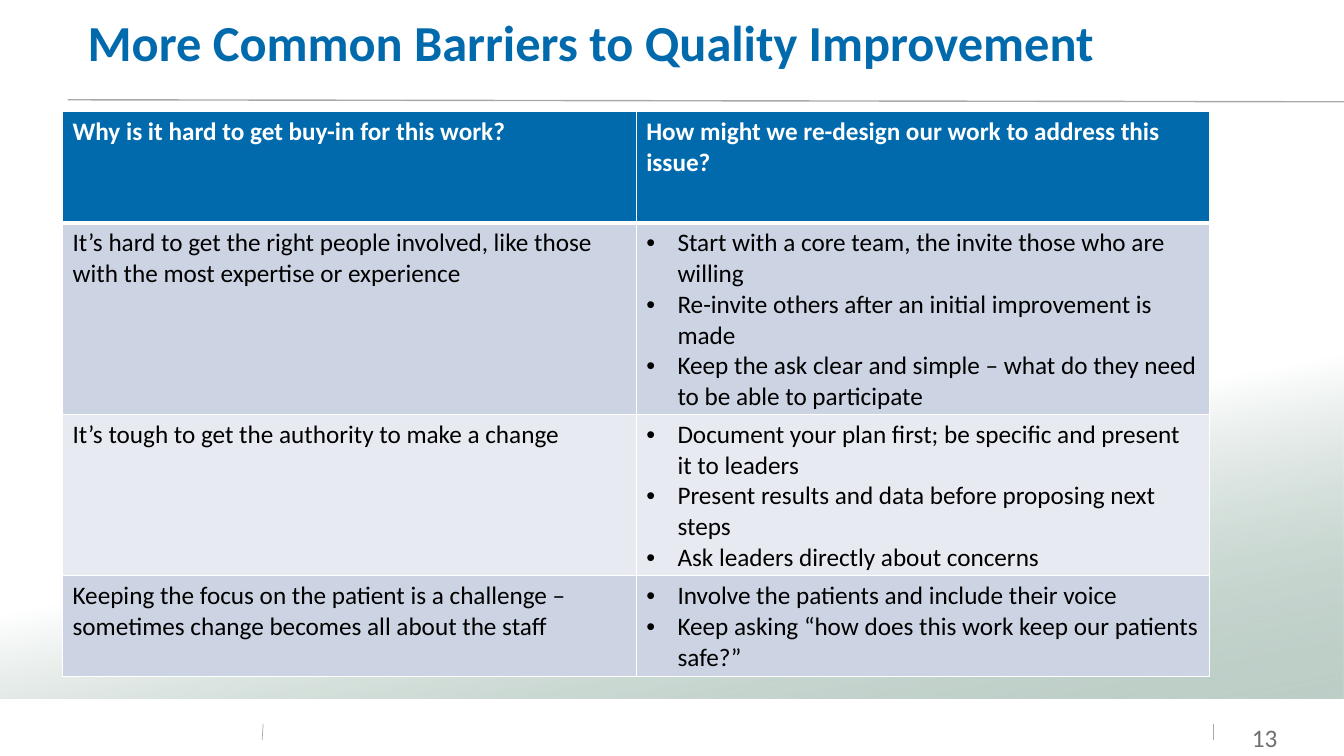
from lxml import etree
from pptx import Presentation, util as u
from pptx.dml.color import RGBColor
from pptx.enum import shapes, text
from pptx.oxml.ns import qn

W, H = 13.33, 7.5
FONT = "Calibri"
BLUE, GREEN, WHITE, BLACK = "006AAD", "7D9F90", "FFFFFF", "000000"
RULE, GREY = "A6AAAD", "6F6F6F"
BANDS = ["CCD4E3", "E7EBF1"]

TITLE = "More Common Barriers to Quality Improvement"
PAGE = "13"
HEADER = ["Why is it hard to get buy-in for this work?",
          "How might we re-design our work to address this issue?"]
BARRIERS = [
    ("It’s hard to get the right people involved, like those with the most expertise or experience",
     ["Start with a core team, the invite those who are willing",
      "Re-invite others after an initial improvement is made",
      "Keep the ask clear and simple – what do they need to be able to participate"]),
    ("It’s tough to get the authority to make a change",
     ["Document your plan first; be specific and present it to leaders",
      "Present results and data before proposing next steps",
      "Ask leaders directly about concerns"]),
    ("Keeping the focus on the patient is a challenge – sometimes change becomes all about the staff",
     ["Involve the patients and include their voice",
      "Keep asking “how does this work keep our patients safe?”"]),
]
TABLE_AT = (0.62, 1.11)
COL_W = 5.69
ROW_H = [1.1, 1.9, 1.6, 1]
RULES = [  # x1, y1, x2, y2, points
    (2.61, 7.18, 2.6, 7.34, 0.5),
    (12.03, 7.18, 12.03, 7.34, 0.5),
    (0.67, 0.99, W, 1.01, 1),
]


def rgb(value):
    return RGBColor.from_string(value)


def inches(*values):
    return [u.Inches(v) for v in values]


def sub(parent, tag, **attrs):
    return etree.SubElement(parent, qn(tag), attrs)


def style(p, size, color, bold=False):
    for r in p.runs:
        r.font.name, r.font.size, r.font.bold = FONT, u.Pt(size), bold
        r.font.color.rgb = rgb(color)


def add_text(s, box, margins, words, size, color, bold=False):
    tf = s.shapes.add_textbox(*inches(*box)).text_frame
    tf.word_wrap = True
    tf.margin_left, tf.margin_top, tf.margin_right, tf.margin_bottom = inches(*margins)
    tf.text = words
    p = tf.paragraphs[0]
    style(p, size, color, bold)
    return p


def add_backdrop(s):
    sp = s.shapes.add_shape(shapes.MSO_SHAPE.RECTANGLE, *inches(0, 1.55, W, 5.38))
    sp.shadow.inherit = False
    sp.line.fill.background()
    sp.fill.gradient()
    sp.fill.gradient_angle = 101
    for stop, color, position in zip(sp.fill.gradient_stops, (GREEN, WHITE), (0, 0.43)):
        stop.color.rgb = rgb(color)
        stop.position = position
    green = next(sp._element.iter(qn("a:srgbClr")))
    sub(green, "a:alpha", val="50000")


def add_rule(s, x1, y1, x2, y2, points):
    line = s.shapes.add_connector(shapes.MSO_CONNECTOR.STRAIGHT, *inches(x1, y1, x2, y2))
    line.line.color.rgb = rgb(RULE)
    line.line.width = u.Pt(points)
    sub(line._element.spPr, "a:effectLst")


def set_borders(cell, top, bottom):
    """Draw white borders; must run before the cell gets its fill."""
    tcPr = cell._tc.get_or_add_tcPr()
    for side, points in zip("LRTB", (1, 1, top, bottom)):
        ln = sub(tcPr, f"a:ln{side}", w=str(u.Pt(points)))
        sub(sub(ln, "a:solidFill"), "a:srgbClr", val=WHITE)


def add_bullet(p):
    pPr = p._p.get_or_add_pPr()
    indent = u.Inches(0.31)
    pPr.set("marL", str(indent))
    pPr.set("indent", str(-indent))
    sub(pPr, "a:buFont", typeface="Arial")
    sub(pPr, "a:buChar", char="•")


def add_barrier_table(s):
    rows = [HEADER] + BARRIERS
    size = (COL_W * len(HEADER), sum(ROW_H))
    table = s.shapes.add_table(len(rows), len(HEADER), *inches(*TABLE_AT, *size)).table
    for col in table.columns:
        col.width = u.Inches(COL_W)
    for i, row in enumerate(rows):
        table.rows[i].height = u.Inches(ROW_H[i])
        header = i == 0
        for j, content in enumerate(row):
            cell = table.cell(i, j)
            set_borders(cell, 3 if i == 1 else 1, 3 if header else 1)
            cell.fill.solid()
            cell.fill.fore_color.rgb = rgb(BLUE if header else BANDS[(i - 1) % 2])
            bulleted = isinstance(content, list)
            cell.text_frame.text = "\n".join(content) if bulleted else content
            for p in cell.text_frame.paragraphs:
                if bulleted:
                    add_bullet(p)
                style(p, 18, WHITE if header else BLACK, header)


def main():
    prs = Presentation()
    prs.slide_width, prs.slide_height = inches(W, H)
    s = prs.slides.add_slide(prs.slide_layouts[6])
    add_backdrop(s)
    for rule in RULES:
        add_rule(s, *rule)
    title = add_text(s, (0.87, 0.15, 11.5, 1.45), (0, 0.05, 0.1, 0.05), TITLE, 36, BLUE, True)
    title.line_spacing = 0.85
    add_barrier_table(s)
    page = add_text(s, (12.21, 7.17, 0.46, 0.29), (0.1, 0, 0, 0.05), PAGE, 18, GREY)
    page.alignment = text.PP_ALIGN.RIGHT
    prs.save("out.pptx")


if __name__ == "__main__":
    main()
